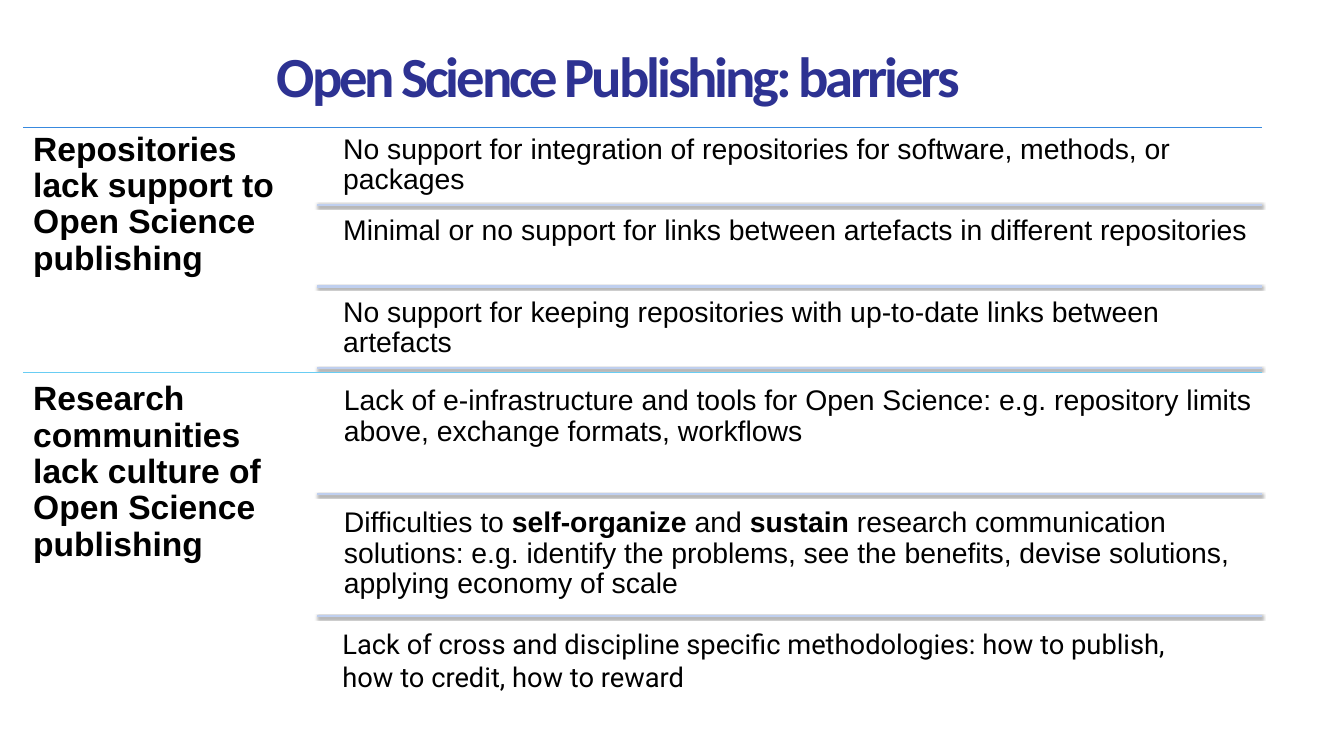
from lxml.etree import SubElement
from pptx import Presentation
from pptx.dml.color import RGBColor
from pptx.enum.shapes import MSO_CONNECTOR
from pptx.enum.text import MSO_ANCHOR, MSO_AUTO_SIZE, PP_ALIGN
from pptx.oxml.ns import qn
from pptx.util import Inches, Pt

NAVY = RGBColor(0x2D, 0x32, 0x92)
BLACK = RGBColor(0x00, 0x00, 0x00)
BLUE = RGBColor(0x38, 0x89, 0xDE)
CYAN = RGBColor(0x69, 0xCD, 0xF3)
PALE_BLUE = RGBColor(0xBF, 0xCF, 0xEF)

GROUP_LEFT = 0.31
BARRIER_RULE_LEFT = 4.2
RULE_RIGHT = 16.7
GROUP_WIDTH = 3.9
GROUP_HEIGHT = 3.3

REPOSITORY_BARRIERS = [
    [("No support for integration of repositories for software, methods, or packages", False)],
    [("Minimal or no support for links between artefacts in different repositories", False)],
    [("No support for keeping repositories with up-to-date links between artefacts", False)],
]
COMMUNITY_BARRIERS = [
    [("Lack of e-infrastructure and tools for Open Science: e.g. repository limits "
      "above, exchange formats, workflows", False)],
    [("Difficulties to ", False), ("self-organize ", True), ("and ", False), ("sustain", True),
     (" research communication solutions: e.g. identify the problems, see the benefits, "
      "devise solutions, applying economy of scale", False)],
]
METHODOLOGY_BARRIER = [
    ("Lack of cross and discipline specific methodologies: how to publish, "
     "how to credit, how to reward", False),
]


def set_insets(frame, inset):
    frame.margin_left = frame.margin_right = Inches(inset)
    frame.margin_top = frame.margin_bottom = Inches(inset)


def add_run(paragraph, text, size, font, color, bold):
    run = paragraph.add_run()
    run.text = text
    run.font.size = Pt(size)
    run.font.name = font
    run.font.color.rgb = color
    run.font.bold = bold
    return run


def add_title(slide, text):
    title = slide.shapes.title
    title.left, title.top = Inches(0.78), Inches(0.37)
    title.width, title.height = Inches(14.8), Inches(1.25)
    frame = title.text_frame
    frame.word_wrap = True
    frame.auto_size = MSO_AUTO_SIZE.NONE
    frame.vertical_anchor = MSO_ANCHOR.MIDDLE
    set_insets(frame, 0)
    paragraph = frame.paragraphs[0]
    paragraph.alignment = PP_ALIGN.CENTER
    run = add_run(paragraph, text, 54, "Calibri", NAVY, True)
    run.font._element.set("spc", "-300")


def add_text(slide, box, runs, size, inset, font="Arial", spacing=0.9, anchor=MSO_ANCHOR.TOP):
    frame = slide.shapes.add_textbox(*map(Inches, box)).text_frame
    frame.word_wrap = True
    frame.vertical_anchor = anchor
    set_insets(frame, inset)
    paragraph = frame.paragraphs[0]
    paragraph.line_spacing = spacing
    for text, bold in runs:
        add_run(paragraph, text, size, font, BLACK, bold)


def add_rule(slide, left, top, color, width, blur, distance):
    rule = slide.shapes.add_connector(
        MSO_CONNECTOR.STRAIGHT, Inches(left), Inches(top), Inches(RULE_RIGHT), Inches(top))
    rule.line.color.rgb = color
    rule.line.width = Pt(width)
    effects = SubElement(rule._element.spPr, qn("a:effectLst"))
    shadow = SubElement(effects, qn("a:outerShdw"), blurRad=str(Pt(blur)),
                        dist=str(Pt(distance)), dir="5400000", rotWithShape="0")
    shadow_color = SubElement(shadow, qn("a:srgbClr"), val="000000")
    SubElement(shadow_color, qn("a:alpha"), val="50000")


def add_group(slide, heading, heading_top, rule_top, rule_color):
    add_rule(slide, GROUP_LEFT, rule_top, rule_color, 0.75, 3, 0)
    add_text(slide, (GROUP_LEFT, heading_top, GROUP_WIDTH, GROUP_HEIGHT),
             [(heading, True)], 32, 0.13)


def add_barriers(slide, barriers, left, top, height, pitch):
    for index, runs in enumerate(barriers):
        row_top = top + index * pitch
        add_text(slide, (left, row_top, RULE_RIGHT - left, height), runs, 27, 0.11)
        add_rule(slide, BARRIER_RULE_LEFT, row_top + height + 0.01, PALE_BLUE, 2, 2, 1)


def main():
    presentation = Presentation()
    presentation.slide_width = Inches(17.78)
    presentation.slide_height = Inches(10)
    slide = presentation.slides.add_slide(presentation.slide_layouts[5])

    add_title(slide, "Open Science Publishing: barriers")
    add_group(slide, "Repositories lack support to Open Science publishing", 1.62, 1.69, BLUE)
    add_barriers(slide, REPOSITORY_BARRIERS, 4.43, 1.67, 1.03, 1.08)
    add_group(slide, "Research communities lack culture of Open Science publishing",
              4.92, 4.92, CYAN)
    add_barriers(slide, COMMUNITY_BARRIERS, 4.44, 5, 1.53, 1.61)
    add_text(slide, (4.48, 8.24, 11.25, 0.98), METHODOLOGY_BARRIER, 26, 0.05,
             font="Roboto", spacing=1.0, anchor=MSO_ANCHOR.MIDDLE)

    presentation.save("out.pptx")


if __name__ == "__main__":
    main()
